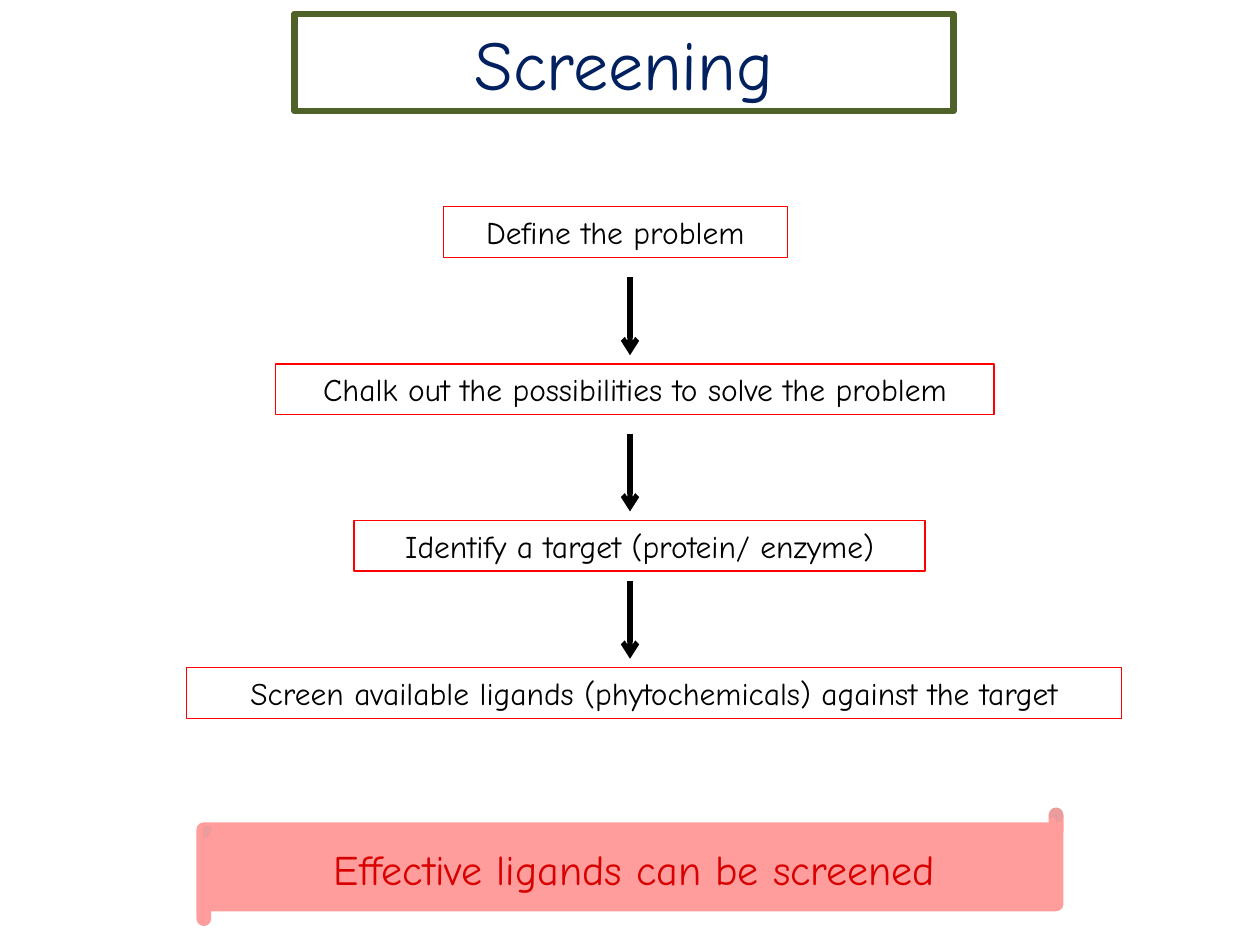
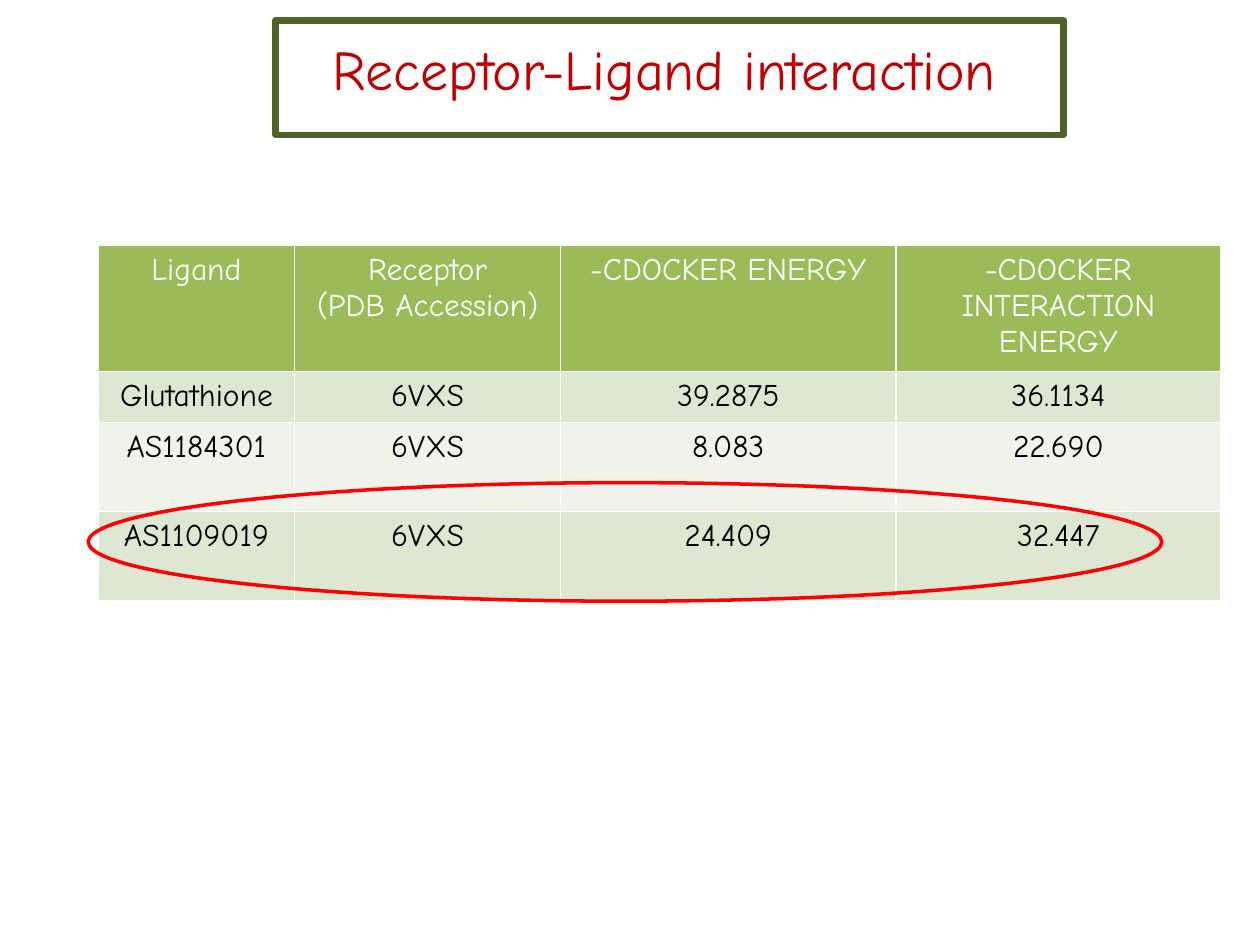
"""Build two slides on ligand screening: a flow of steps and a table of scores."""
from lxml.etree import SubElement
from pptx import Presentation
from pptx.dml.color import RGBColor
from pptx.enum.shapes import MSO_CONNECTOR, MSO_SHAPE
from pptx.enum.text import MSO_ANCHOR, PP_ALIGN
from pptx.oxml.ns import qn
from pptx.util import Cm, Pt

FONT = "Comic Neue"
HUES = {
    "frame": "4F6228", "navy": "002060", "dark": "C00000", "red": "FF0000",
    "black": "000000", "white": "FFFFFF", "head": "9BBB59",
    "odd": "DEE7D1", "even": "EFF3EA",
}

STEPS = [
    ("Define the problem", 8.94, 4.17, 6.93),
    ("Chalk out the possibilities to solve the problem", 5.56, 7.34, 14.48),
    ("Identify a target (protein/ enzyme)", 7.14, 10.49, 11.51),
    ("Screen available ligands (phytochemicals) against the target",
     3.76, 13.46, 18.85),
]
STEP_TALL = 1.02
MID, REACH, GAP = 12.7, 1.57, 0.18

ROWS = [
    ("Ligand", "Receptor\n(PDB Accession)", "-CDOCKER ENERGY",
     "-CDOCKER INTERACTION ENERGY"),
    ("Glutathione", "6VXS", "39.2875", "36.1134"),
    ("AS1184301", "6VXS", "8.083", "22.690"),
    ("AS1109019", "6VXS", "24.409", "32.447"),
]
WIDTHS = [3.96, 5.36, 6.76, 6.55]
TALLS = [2.52, 1.03, 1.79, 1.79]


def hue(name):
    return RGBColor.from_string(HUES[name])


def write(frame, text, size, ink):
    frame.text = text
    for para in frame.paragraphs:
        para.alignment = PP_ALIGN.CENTER
        for run in para.runs:
            font = run.font
            font.name, font.size, font.bold = FONT, Pt(size), False
            font.color.rgb = hue(ink)


def outline(slide, kind, place, ink=None, width=0.75):
    shape = slide.shapes.add_shape(kind, *map(Cm, place))
    shape.shadow.inherit = False
    shape.fill.background()
    if ink:
        shape.line.color.rgb = hue(ink)
        shape.line.width = Pt(width)
    else:
        shape.line.fill.background()
    return shape


def frame_title(slide, place):
    return outline(slide, MSO_SHAPE.RECTANGLE, place, "frame", 3.75)


def add_label(slide, place, text, size, ink):
    frame = slide.shapes.add_textbox(*map(Cm, place)).text_frame
    frame.word_wrap = True
    write(frame, text, size, ink)


def add_arrow(slide, end):
    line = slide.shapes.add_connector(
        MSO_CONNECTOR.STRAIGHT, Cm(MID), Cm(end - REACH), Cm(MID), Cm(end))
    line.line.color.rgb = hue("black")
    line.line.width = Pt(3)
    SubElement(line.line._get_or_add_ln(), qn("a:tailEnd"), type="arrow")
    SubElement(line._element.spPr, qn("a:effectLst"))


def draw_flow(slide):
    title = frame_title(slide, (5.94, 0.28, 13.28, 1.96))
    write(title.text_frame, "Screening", 40, "navy")
    for text, left, top, wide in STEPS:
        box = outline(slide, MSO_SHAPE.RECTANGLE,
                      (left, top, wide, STEP_TALL), "red")
        write(box.text_frame, text, 18, "black")
    for step in STEPS[1:]:
        add_arrow(slide, step[2] - GAP)
    add_label(slide, (1.78, 16.87, 22.02, 1.27),
              "Effective ligands can be screened", 24, "dark")
    scroll = outline(slide, MSO_SHAPE.HORIZONTAL_SCROLL,
                     (3.96, 16.28, 17.48, 2.39))
    scroll.fill.solid()
    scroll.fill.fore_color.rgb = hue("red")
    tint = scroll._element.spPr.find(".//" + qn("a:srgbClr"))
    SubElement(tint, qn("a:alpha"), val="39000")


def draw_scores(slide):
    add_label(slide, (5.36, 0.58, 16.08, 1.63),
              "Receptor-Ligand interaction", 32, "dark")
    frame_title(slide, (5.56, 0.41, 15.88, 2.31))
    table = slide.shapes.add_table(
        len(ROWS), len(WIDTHS), Cm(1.98), Cm(4.95),
        Cm(sum(WIDTHS)), Cm(sum(TALLS))).table
    for col, wide in zip(table.columns, WIDTHS):
        col.width = Cm(wide)
    for r, (row, tall) in enumerate(zip(ROWS, TALLS)):
        table.rows[r].height = Cm(tall)
        fill = "head" if r == 0 else "odd" if r % 2 else "even"
        for c, text in enumerate(row):
            cell = table.cell(r, c)
            cell.fill.solid()
            cell.fill.fore_color.rgb = hue(fill)
            cell.vertical_anchor = MSO_ANCHOR.TOP
            write(cell.text_frame, text, 18, "black" if r else "white")
    outline(slide, MSO_SHAPE.OVAL, (1.78, 9.73, 21.64, 2.39), "red", 2)


def main():
    deck = Presentation()
    deck.slide_width, deck.slide_height = Cm(25.4), Cm(19.05)
    for draw in (draw_flow, draw_scores):
        draw(deck.slides.add_slide(deck.slide_layouts[6]))
    deck.save("out.pptx")


if __name__ == "__main__":
    main()
